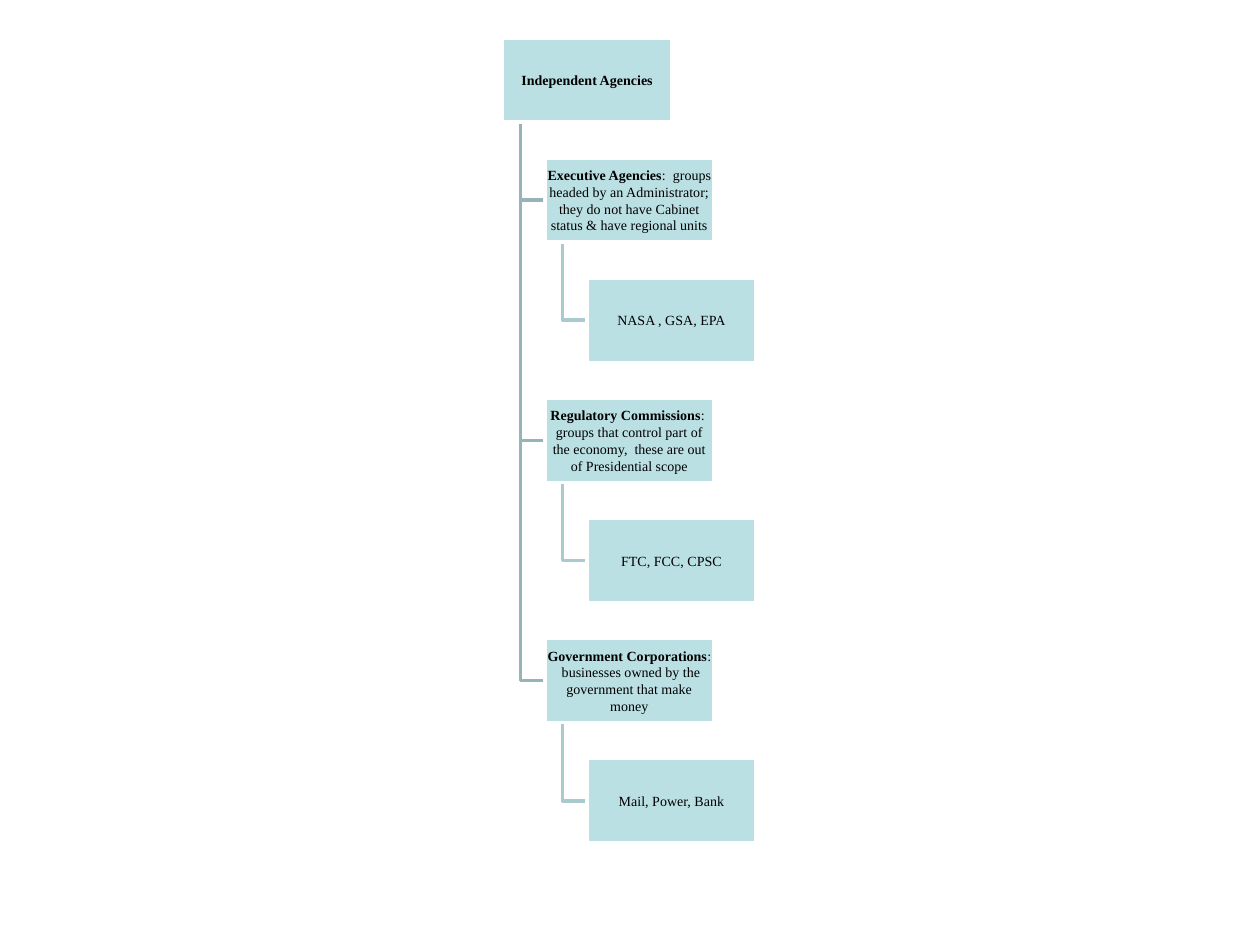
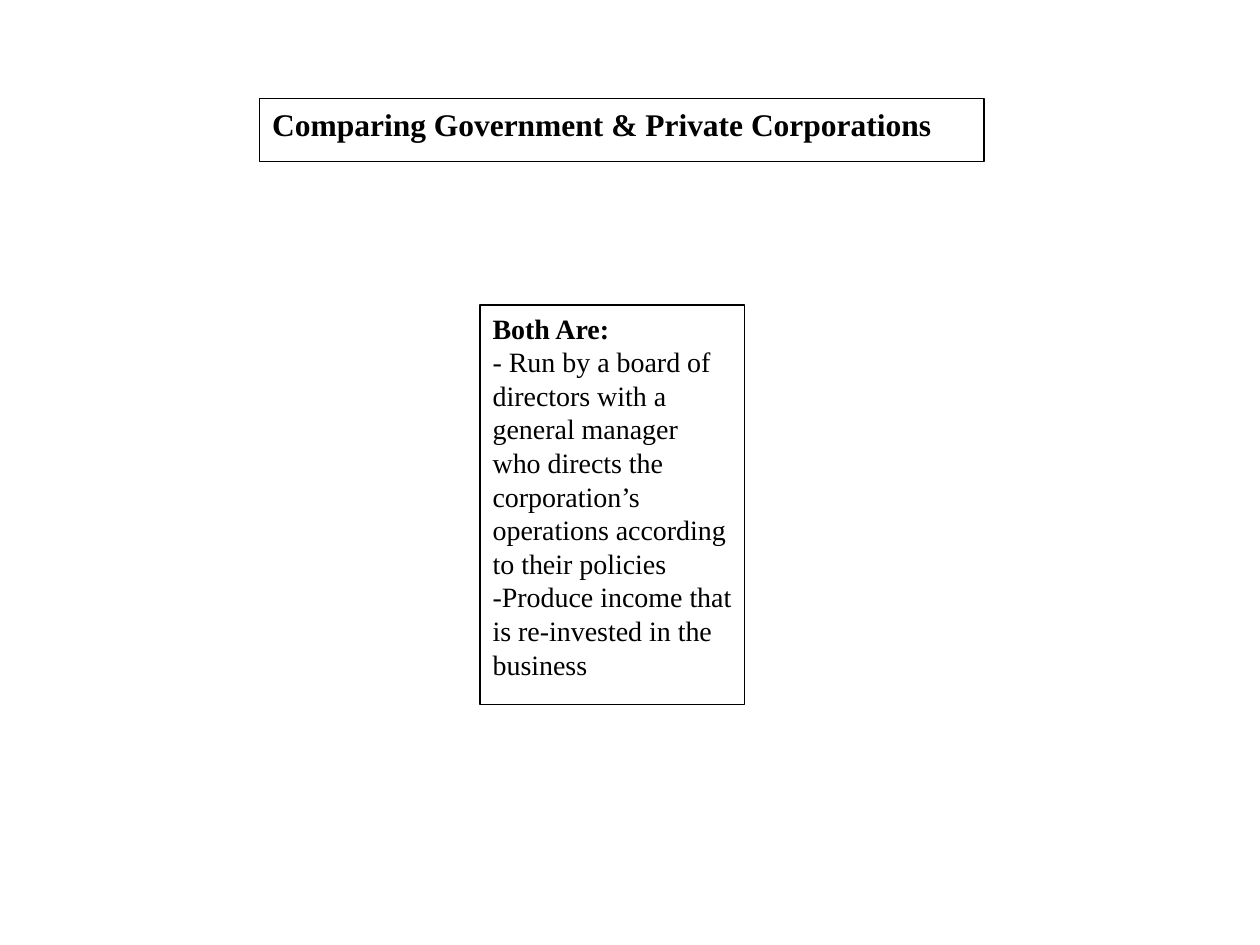
from pptx import Presentation
from pptx.dml.color import RGBColor
from pptx.enum import shapes, text
from pptx.util import Inches, Pt

FONT = "Times New Roman"
BLACK, WHITE, NODE_FILL = "000000", "FFFFFF", "BBE0E3"
ELBOW_COLORS = ["96B3B6", "AACBCE"]

BOX_W, BOX_H = 1.34, 0.67
TREE_LEFT, TREE_TOP = 3.99, 0.3
INDENT, ROW_STEP = BOX_H / 2, 5.72 / 6
TRUNK_OFFSET = 0.14

AGENCIES = [
    (0, None, "Independent Agencies", ""),
    (1, 0, "Executive Agencies",
     ":  groups headed by an Administrator; they do not have Cabinet status & have regional units"),
    (2, 1, "", "NASA , GSA, EPA"),
    (1, 0, "Regulatory Commissions",
     ":  groups that control part of the economy,  these are out of Presidential scope"),
    (2, 3, "", "FTC, FCC, CPSC"),
    (1, 0, "Government Corporations",
     ":  businesses owned by the government that make money"),
    (2, 5, "", "Mail, Power, Bank"),
]

SHARED_TRAITS = [
    ("Both Are:", True),
    ("- Run by a board of directors with a general manager who directs the "
     "corporation’s operations according to their policies", False),
    ("-Produce income that is re-invested in the business", False),
]


def rgb(value):
    return RGBColor.from_string(value)


def add_run(p, content, size, bold=False, color=BLACK):
    r = p.add_run()
    r.text = content
    r.font.name = FONT
    r.font.size = Pt(size)
    r.font.bold = bold
    r.font.color.rgb = rgb(color)


def style_box(sp, fill, line, width):
    sp.fill.solid()
    sp.fill.fore_color.rgb = rgb(fill)
    sp.line.color.rgb = rgb(line)
    sp.line.width = Pt(width)


def node_position(row):
    return TREE_LEFT + INDENT * AGENCIES[row][0], TREE_TOP + ROW_STEP * row


def add_node(s, row):
    left, top = node_position(row)
    sp = s.shapes.add_shape(shapes.MSO_SHAPE.RECTANGLE, Inches(left), Inches(top),
                            Inches(BOX_W), Inches(BOX_H))
    sp.shadow.inherit = False
    style_box(sp, NODE_FILL, WHITE, 2)
    tf = sp.text_frame
    tf.word_wrap = True
    tf.vertical_anchor = text.MSO_ANCHOR.MIDDLE
    tf.margin_left = tf.margin_right = tf.margin_top = tf.margin_bottom = Inches(0.01)
    p = tf.paragraphs[0]
    p.alignment = text.PP_ALIGN.CENTER
    name, detail = AGENCIES[row][2:]
    if name:
        add_run(p, name, 8, bold=True)
    if detail:
        add_run(p, detail, 8)


def add_elbow(s, parent, child):
    left, top = node_position(parent)
    child_left, child_top = node_position(child)
    x, y = Inches(left + TRUNK_OFFSET), Inches(child_top + BOX_H / 2)
    builder = s.shapes.build_freeform(x, Inches(top + BOX_H + 0.01))
    builder.add_line_segments([(x, y), (Inches(child_left), y)], close=False)
    sp = builder.convert_to_shape()
    sp.shadow.inherit = False
    sp.fill.background()
    sp.line.color.rgb = rgb(ELBOW_COLORS[AGENCIES[parent][0]])
    sp.line.width = Pt(2)


def fill_placeholder(sp, box, lines, size):
    sp.left, sp.top, sp.width, sp.height = map(Inches, box)
    style_box(sp, WHITE, BLACK, 0.75)
    tf = sp.text_frame
    tf.word_wrap = True
    tf.auto_size = text.MSO_AUTO_SIZE.NONE
    tf.vertical_anchor = text.MSO_ANCHOR.TOP
    for i, (content, bold) in enumerate(lines):
        p = tf.add_paragraph() if i else tf.paragraphs[0]
        p.alignment = text.PP_ALIGN.LEFT
        p.space_before = Pt(0)
        pPr = p._p.get_or_add_pPr()
        pPr.set("marL", "0")
        pPr.set("indent", "0")
        pPr.append(pPr.makeelement(
            "{http://schemas.openxmlformats.org/drawingml/2006/main}buNone", {}))
        add_run(p, content, size, bold)


def build_agency_tree(prs):
    s = prs.slides.add_slide(prs.slide_layouts[6])
    for row in reversed(range(1, len(AGENCIES))):
        add_elbow(s, AGENCIES[row][1], row)
    for row in range(len(AGENCIES)):
        add_node(s, row)


def build_comparison(prs):
    s = prs.slides.add_slide(prs.slide_layouts[1])
    fill_placeholder(s.placeholders[1], (3.81, 2.42, 2.1, 3.17), SHARED_TRAITS, 16)
    fill_placeholder(s.shapes.title, (2.06, 0.78, 5.75, 0.5),
                     [("Comparing Government & Private Corporations", True)], 18)


def main():
    prs = Presentation()
    prs.slide_width, prs.slide_height = Inches(10), Inches(7.5)
    build_agency_tree(prs)
    build_comparison(prs)
    prs.save("out.pptx")


if __name__ == "__main__":
    main()
